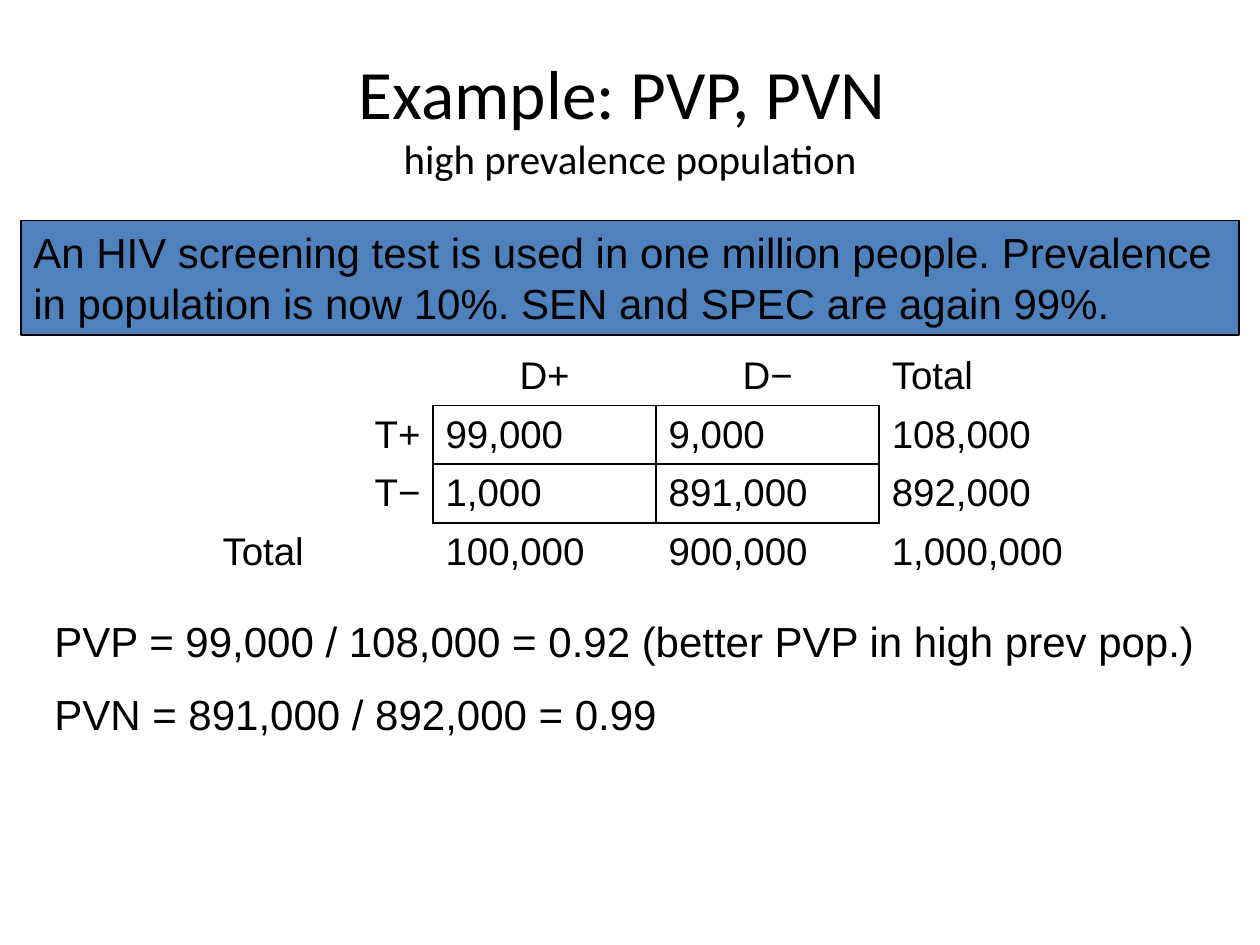
from lxml.etree import SubElement
from pptx import Presentation
from pptx.dml.color import RGBColor
from pptx.enum.shapes import MSO_SHAPE
from pptx.enum.text import MSO_ANCHOR, PP_ALIGN
from pptx.oxml.ns import qn
from pptx.util import Pt

THEME = {
    "black": RGBColor(0, 0, 0),
    "blue": RGBColor(0x4F, 0x81, 0xBD),
    "title": {"name": "Calibri", "size": Pt(39.6)},
    "subtitle": {"name": "Calibri", "size": Pt(23.4)},
    "body": {"name": "Arial", "size": Pt(24)},
    "table": {"name": "Arial", "size": Pt(22)},
}


def add_run(p, text, style):
    r = p.add_run()
    r.text = text
    for key, value in THEME[style].items():
        setattr(r.font, key, value)
    r.font.color.rgb = THEME["black"]


def add_border(cell, side):
    ln = SubElement(cell._tc.get_or_add_tcPr(), qn(f"a:ln{side}"), w=str(Pt(1)))
    fill = SubElement(ln, qn("a:solidFill"))
    SubElement(fill, qn("a:srgbClr"), val=str(THEME["black"]))


prs = Presentation()
prs.slide_width, prs.slide_height = Pt(720), Pt(540)
s = prs.slides.add_slide(prs.slide_layouts[6])

sp = s.shapes.add_textbox(Pt(36), Pt(21.6), Pt(648), Pt(90))
tf = sp.text_frame
tf.word_wrap = True
tf.vertical_anchor = MSO_ANCHOR.MIDDLE
p = tf.paragraphs[0]
p.alignment = PP_ALIGN.CENTER
add_run(p, "Example: PVP, PVN ", "title")
p.add_line_break()
add_run(p, "high prevalence population", "subtitle")

rows = [
    ["", "D+", "D−", "Total"],
    ["T+", "99,000", "9,000", "108,000"],
    ["T−", "1,000", "891,000", "892,000"],
    ["Total", "100,000", "900,000", "1,000,000"],
]
boxed = {(1, 1), (1, 2), (2, 1), (2, 2)}
sides = {"L": (0, -1), "R": (0, 1), "T": (-1, 0), "B": (1, 0)}
aligns = {(0, 1): PP_ALIGN.CENTER, (0, 2): PP_ALIGN.CENTER,
          (1, 0): PP_ALIGN.RIGHT, (2, 0): PP_ALIGN.RIGHT}

table = s.shapes.add_table(4, 4, Pt(120), Pt(198), Pt(510), Pt(134.4)).table
table.first_row = table.horz_banding = False
style_id = table._tbl.tblPr.find(qn("a:tableStyleId"))
style_id.text = "{2D5ABB26-0587-4C30-8999-92F81FD0307C}"
for i, row in enumerate(rows):
    for j, text in enumerate(row):
        cell = table.cell(i, j)
        cell.vertical_anchor = MSO_ANCHOR.MIDDLE
        for side, (di, dj) in sides.items():
            if boxed & {(i, j), (i + di, j + dj)} and (
                (i, j) in boxed or (i + di, j + dj) in boxed
            ):
                add_border(cell, side)
        cell.fill.background()
        if text:
            p = cell.text_frame.paragraphs[0]
            p.alignment = aligns.get((i, j), PP_ALIGN.LEFT)
            add_run(p, text, "table")

results = [
    ("PVP = 99,000 / 108,000 = 0.92 (better PVP in high prev pop.)", 348, 666.5, False),
    ("PVN = 891,000 / 892,000 = 0.99", 390, 468, True),
]
for text, top, width, wrap in results:
    sp = s.shapes.add_textbox(Pt(24), Pt(top), Pt(width), Pt(36))
    tf = sp.text_frame
    tf.word_wrap = wrap
    add_run(tf.paragraphs[0], text, "body")

sp = s.shapes.add_shape(MSO_SHAPE.RECTANGLE, Pt(12), Pt(126), Pt(696), Pt(65.4))
sp.shadow.inherit = False
sp.fill.solid()
sp.fill.fore_color.rgb = THEME["blue"]
sp.line.color.rgb = THEME["black"]
sp.line.width = Pt(0.75)
tf = sp.text_frame
tf.word_wrap = True
tf.vertical_anchor = MSO_ANCHOR.TOP
p = tf.paragraphs[0]
p.alignment = PP_ALIGN.LEFT
add_run(p, "An HIV screening test is used in one million people. Prevalence in "
           "population is now 10%. SEN and SPEC are again 99%.", "body")

prs.save("out.pptx")
